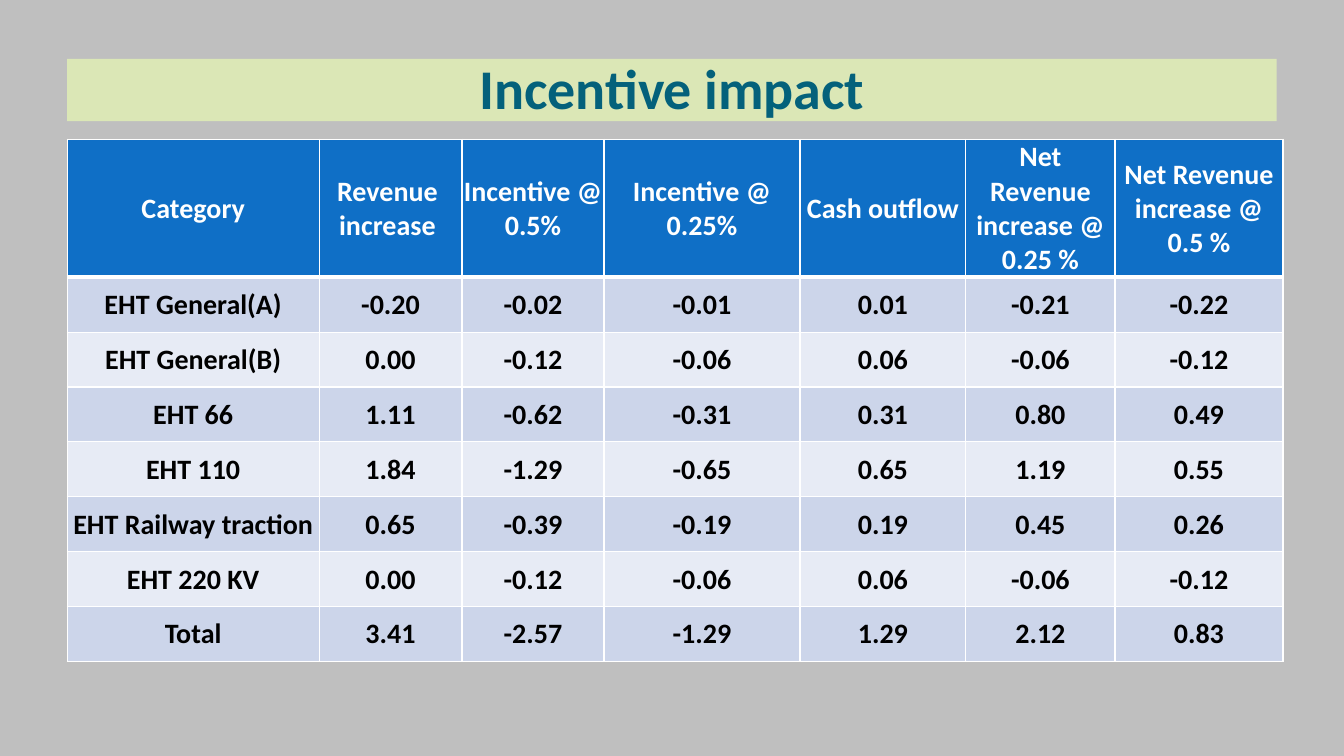
from lxml import etree
from pptx import Presentation
from pptx.dml.color import RGBColor
from pptx.enum.text import MSO_ANCHOR, MSO_AUTO_SIZE, PP_ALIGN
from pptx.oxml.ns import qn
from pptx.util import Pt

CENTER = PP_ALIGN.CENTER
MIDDLE, BOTTOM = MSO_ANCHOR.MIDDLE, MSO_ANCHOR.BOTTOM
NO_AUTOFIT = MSO_AUTO_SIZE.NONE
FONT = "Calibri"
COLORS = {
    "background": "BFBFBF",
    "title_fill": "DBE7B6",
    "title_text": "04617B",
    "header_fill": "0F6FC6",
    "header_text": "FFFFFF",
    "odd_row": "CCD5EA",
    "even_row": "E7EBF5",
    "body_text": "000000",
    "border": "FFFFFF",
}

HEADER = ["Category", "Revenue \nincrease ", "Incentive @ 0.5%",
          "Incentive @ 0.25%", "Cash outflow",
          "Net Revenue increase @ 0.25 %", "Net Revenue increase @ 0.5 %"]
BODY = [
    ["EHT General(A)", "-0.20", "-0.02", "-0.01", "0.01", "-0.21", "-0.22"],
    ["EHT General(B)", "0.00", "-0.12", "-0.06", "0.06", "-0.06", "-0.12"],
    ["EHT 66", "1.11", "-0.62", "-0.31", "0.31", "0.80", "0.49"],
    ["EHT 110", "1.84", "-1.29", "-0.65", "0.65", "1.19", "0.55"],
    ["EHT Railway traction", "0.65", "-0.39", "-0.19", "0.19", "0.45", "0.26"],
    ["EHT 220 KV", "0.00", "-0.12", "-0.06", "0.06", "-0.06", "-0.12"],
    ["Total", "3.41", "-2.57", "-1.29", "1.29", "2.12", "0.83"],
]
COL_WIDTHS = [180, 102, 101.5, 140, 118.5, 106.5, 120]
HEADER_HEIGHT, ROW_HEIGHT = 80.5, 39.2


def rgb(name):
    return RGBColor.from_string(COLORS[name])


def set_insets(frame, left, top, right, bottom):
    frame.margin_left, frame.margin_top = Pt(left), Pt(top)
    frame.margin_right, frame.margin_bottom = Pt(right), Pt(bottom)


def format_text(tf, size, color):
    for p in tf.paragraphs:
        p.alignment = CENTER
        p.font.name, p.font.size, p.font.bold = FONT, Pt(size), True
        p.font.color.rgb = rgb(color)


def set_borders(cell, top, bottom):
    tcPr = cell._tc.get_or_add_tcPr()
    for side, width in (("L", 1), ("R", 1), ("T", top), ("B", bottom)):
        ln = etree.SubElement(tcPr, qn(f"a:ln{side}"), w=str(Pt(width)))
        fill = etree.SubElement(ln, qn("a:solidFill"))
        etree.SubElement(fill, qn("a:srgbClr"), val=COLORS["border"])


def add_title(slide, left, top, width, height):
    s = slide.shapes.title
    s.left, s.top, s.width, s.height = Pt(left), Pt(top), Pt(width), Pt(height)
    s.fill.solid()
    s.fill.fore_color.rgb = rgb("title_fill")
    tf = s.text_frame
    tf.text = "Incentive impact"
    tf.auto_size = NO_AUTOFIT
    tf.vertical_anchor = BOTTOM
    set_insets(tf, 0, 3.6, 0, 0)
    format_text(tf, 40, "title_text")


def add_impact_table(slide, left, top):
    rows = [HEADER] + BODY
    heights = [HEADER_HEIGHT] + [ROW_HEIGHT] * len(BODY)
    table = slide.shapes.add_table(len(rows), len(HEADER), Pt(left), Pt(top),
                                   Pt(sum(COL_WIDTHS)), Pt(sum(heights))).table
    for column, width in zip(table.columns, COL_WIDTHS):
        column.width = Pt(width)
    for i, (values, height) in enumerate(zip(rows, heights)):
        table.rows[i].height = Pt(height)
        # Header row, then alternating bands
        fill = "header_fill" if i == 0 else "odd_row" if i % 2 else "even_row"
        color = "header_text" if i == 0 else "body_text"
        for j, value in enumerate(values):
            cell = table.cell(i, j)
            cell.text = value
            cell.vertical_anchor = MIDDLE
            set_insets(cell, 0.7, 0.7, 0.7, 0)
            # The rule below the header is heavier
            set_borders(cell, 3 if i == 1 else 1, 3 if i == 0 else 1)
            cell.fill.solid()
            cell.fill.fore_color.rgb = rgb(fill)
            format_text(cell.text_frame, 20, color)


def main():
    prs = Presentation()
    prs.slide_width, prs.slide_height = Pt(960), Pt(540)
    slide = prs.slides.add_slide(prs.slide_layouts[5])
    slide.background.fill.solid()
    slide.background.fill.fore_color.rgb = rgb("background")
    add_title(slide, 48, 42, 864, 44.5)
    add_impact_table(slide, 48, 99.4)
    prs.save("out.pptx")


if __name__ == "__main__":
    main()
